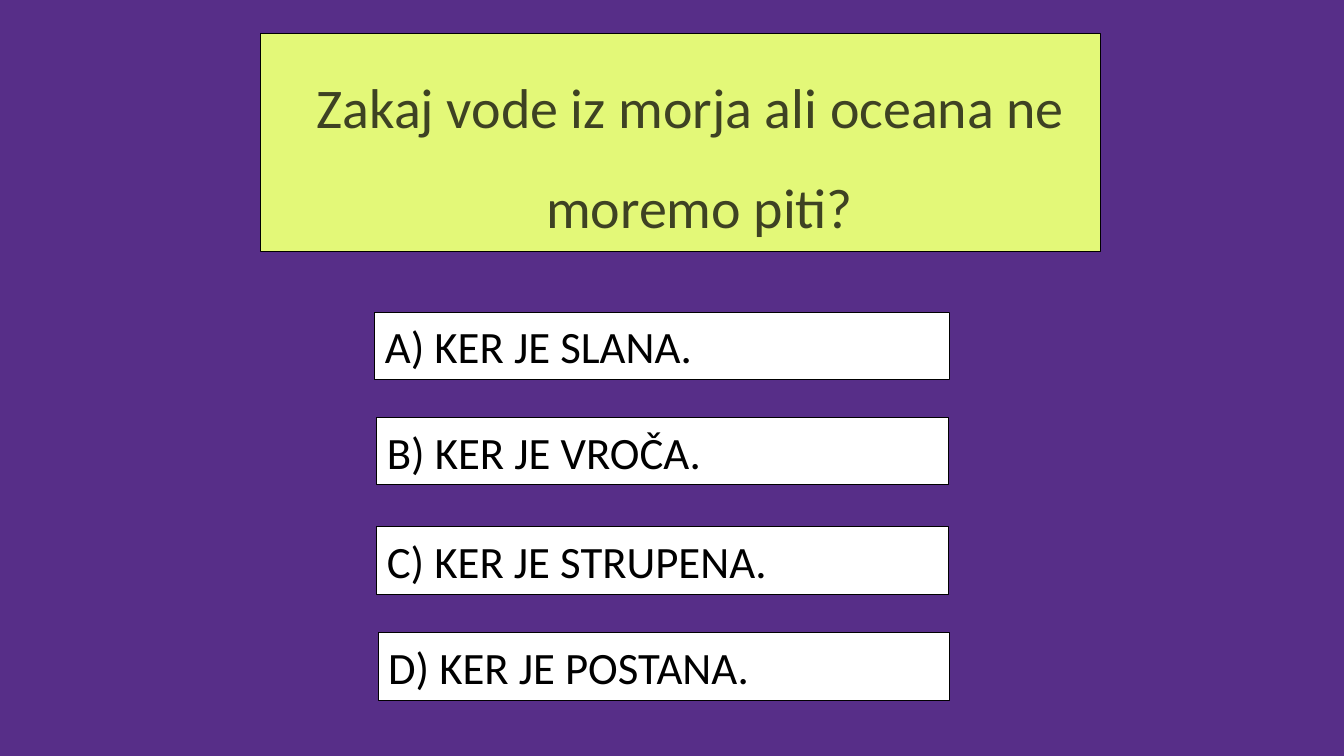
from pptx import Presentation
from pptx import util as u
from pptx.dml import color
from pptx.enum import shapes, text

COLOURS = {
    "background": "572E88",
    "question": "E3F878",
    "question_text": "3E4223",
    "answer": "FFFFFF",
    "black": "000000",
}

# Answer text, left, top and width in centimetres
ANSWERS = [
    ("A) KER JE SLANA.", 9.45, 7.87, 14.48),
    ("B) KER JE VROČA.", 9.5, 10.52, 14.4),
    ("C) KER JE STRUPENA.", 9.5, 13.28, 14.4),
    ("D) KER JE POSTANA.", 9.53, 15.95, 14.4),
]
ANSWER_HEIGHT = 1.7


def rgb(name):
    return color.RGBColor.from_string(COLOURS[name])


def add_box(page, kind, left, top, width, height, fill):
    """Add a filled shape with a thin black outline; lengths in centimetres."""
    box = page.shapes.add_shape(
        kind, u.Cm(left), u.Cm(top), u.Cm(width), u.Cm(height))
    box.shadow.inherit = False
    box.fill.solid()
    box.fill.fore_color.rgb = rgb(fill)
    box.line.color.rgb = rgb("black")
    box.line.width = u.Pt(0.75)
    return box


def write(box, words, *, size, colour="black", align=text.PP_ALIGN.LEFT,
          anchor=text.MSO_ANCHOR.MIDDLE, spacing=1.0, margin=0, indent=0):
    frame = box.text_frame
    frame.word_wrap = True
    frame.vertical_anchor = anchor
    para = frame.paragraphs[0]
    para.alignment = align
    para.line_spacing = spacing
    if margin:
        properties = para._p.get_or_add_pPr()
        properties.set("marL", str(u.Cm(margin)))
        properties.set("indent", str(u.Cm(indent)))
    span = para.add_run()
    span.text = words
    span.font.name = "Calibri"
    span.font.size = u.Pt(size)
    span.font.color.rgb = rgb(colour)


def add_question(page, words):
    box = add_box(page, shapes.MSO_SHAPE.RECTANGLE,
                  6.56, 0.85, 21.17, 5.5, "question")
    write(box, words, size=40, colour="question_text",
          align=text.PP_ALIGN.CENTER, anchor=text.MSO_ANCHOR.TOP,
          spacing=1.5, margin=0.97, indent=-0.46)


def add_answer(page, words, left, top, width):
    box = add_box(page, shapes.MSO_SHAPE.ACTION_BUTTON_CUSTOM,
                  left, top, width, ANSWER_HEIGHT, "answer")
    write(box, words, size=32)


def main():
    deck = Presentation()
    deck.slide_width, deck.slide_height = u.Cm(33.87), u.Cm(19.05)
    page = deck.slides.add_slide(deck.slide_layouts[6])
    page.background.fill.solid()
    page.background.fill.fore_color.rgb = rgb("background")

    add_question(page, "Zakaj vode iz morja ali oceana ne moremo piti?")
    for answer in ANSWERS:
        add_answer(page, *answer)

    deck.save("out.pptx")


if __name__ == "__main__":
    main()
